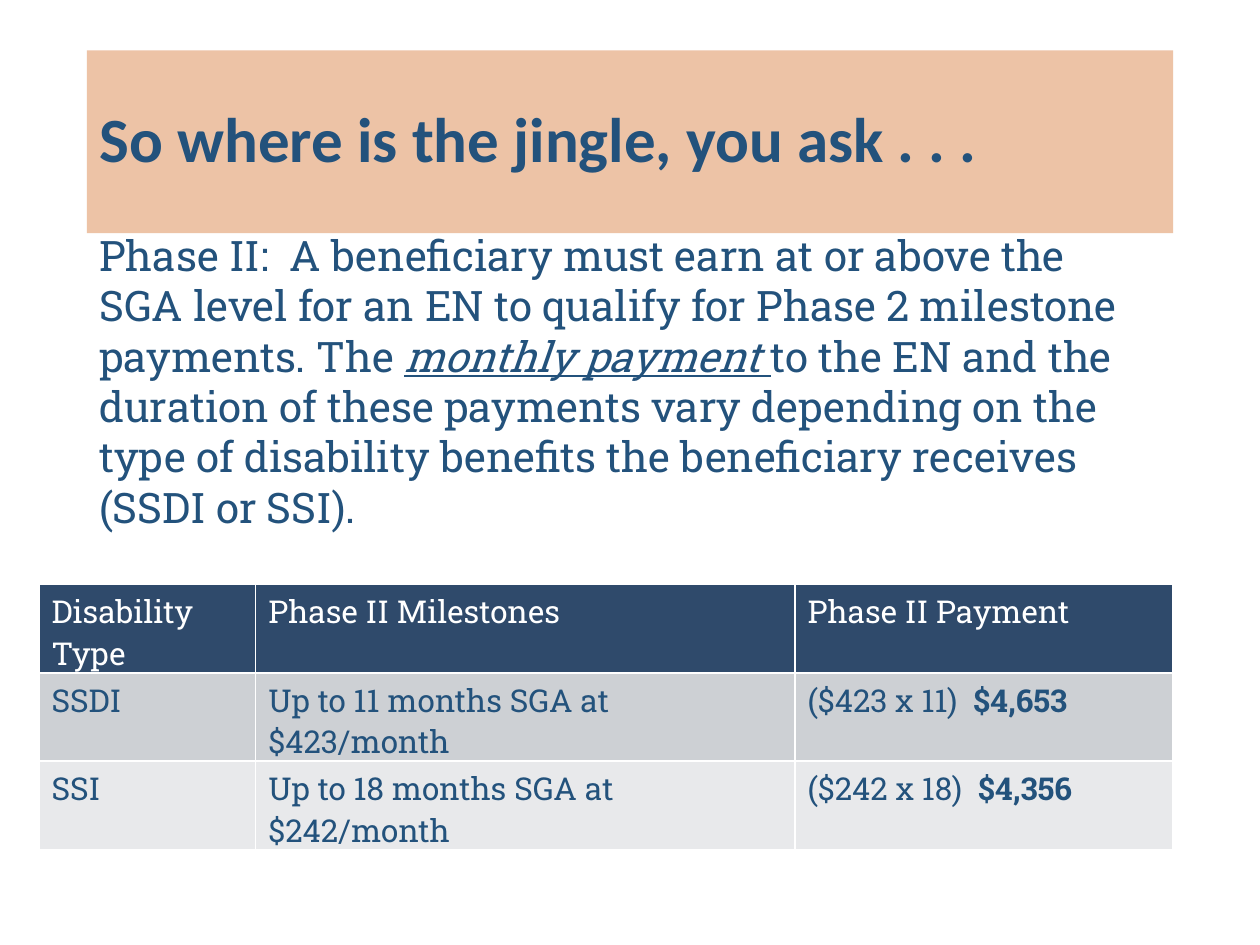
import pptx
import pptx.util
import pptx.dml.color
import pptx.enum.text
from dataclasses import dataclass

Inches = pptx.util.Inches
Pt = pptx.util.Pt
Anchor = pptx.enum.text.MSO_ANCHOR


@dataclass(frozen=True)
class Theme:
    ink: str = "23527C"
    white: str = "FFFFFF"
    peach: str = "EDC3A6"
    bands: tuple = ("2F4A6B", "CDD0D4", "E8E9EB")
    head: str = "Calibri"
    body: str = "Roboto Slab"
    big: int = 36
    mid: int = 24
    small: int = 18


THEME = Theme()
HEADING = "So where is the jingle, you ask . . ."
INTRO = [
    ("Phase II:  A beneficiary must earn at or above the SGA level for an EN "
     "to qualify for Phase 2 milestone payments. The ", {}),
    ("monthly payment ", {"italic": True, "underline": True}),
    ("to the EN and the duration of these payments vary depending on the type "
     "of disability benefits the beneficiary receives (SSDI or SSI).", {}),
]
BOLD = {"bold": True}
ROWS = [
    [[("Disability Type", {})], [("Phase II Milestones", {})],
     [("Phase II Payment", {})]],
    [[("SSDI", {})], [("Up to 11 months SGA at $423/month", {})],
     [("($423 x 11)  ", {}), ("$4,653", BOLD)]],
    [[("SSI", {})], [("Up to 18 months SGA at $242/month", {})],
     [("($242 x 18)  ", {}), ("$4,356", BOLD)]],
]
COLS = [1.72, 4.28, 3]


def paint(item, tint):
    item.fill.solid()
    item.fill.fore_color.rgb = pptx.dml.color.RGBColor.from_string(tint)


def write(para, runs, face, size, tint):
    """Fill a paragraph with (text, format) runs."""
    base = {"name": face, "size": Pt(size), "bold": False}
    for text, extra in runs:
        run = para.add_run()
        run.text = text
        for key, value in {**base, **extra}.items():
            setattr(run.font, key, value)
        run.font.color.rgb = pptx.dml.color.RGBColor.from_string(tint)


def add_title(slide):
    title = slide.shapes.title
    place = {"left": 0.69, "top": 0.4, "width": 8.62, "height": 1.45}
    for key, value in place.items():
        setattr(title, key, Inches(value))
    paint(title, THEME.peach)
    frame = title.text_frame
    frame.vertical_anchor = Anchor.MIDDLE
    para = frame.paragraphs[0]
    para.alignment = pptx.enum.text.PP_ALIGN.LEFT
    para.line_spacing = 0.9
    write(para, [(HEADING, BOLD)], THEME.head, THEME.big, THEME.ink)


def add_intro(slide):
    box = slide.shapes.add_textbox(
        Inches(0.69), Inches(1.77), Inches(8.52), Inches(2.12))
    frame = box.text_frame
    frame.word_wrap = True
    para = frame.paragraphs[0]
    para.line_spacing = Pt(1.2 * THEME.mid)
    write(para, INTRO, THEME.body, THEME.mid, THEME.ink)


def add_grid(slide):
    # The default table style supplies the white cell borders
    grid = slide.shapes.add_table(
        len(ROWS), len(COLS), Inches(0.31), Inches(4.64),
        Inches(sum(COLS)), Inches(0.41 * len(ROWS))).table
    for col, width in zip(grid.columns, COLS):
        col.width = Inches(width)
    for r, (row, band) in enumerate(zip(ROWS, THEME.bands)):
        tint = THEME.ink if r else THEME.white
        for c, runs in enumerate(row):
            cell = grid.cell(r, c)
            paint(cell, band)
            write(cell.text_frame.paragraphs[0], runs,
                  THEME.body, THEME.small, tint)


def main():
    deck = pptx.Presentation()
    deck.slide_width, deck.slide_height = Inches(10), Inches(7.5)
    slide = deck.slides.add_slide(deck.slide_layouts[5])
    # Heading, explanation, payment table
    add_title(slide)
    add_intro(slide)
    add_grid(slide)
    deck.save("out.pptx")


if __name__ == "__main__":
    main()
